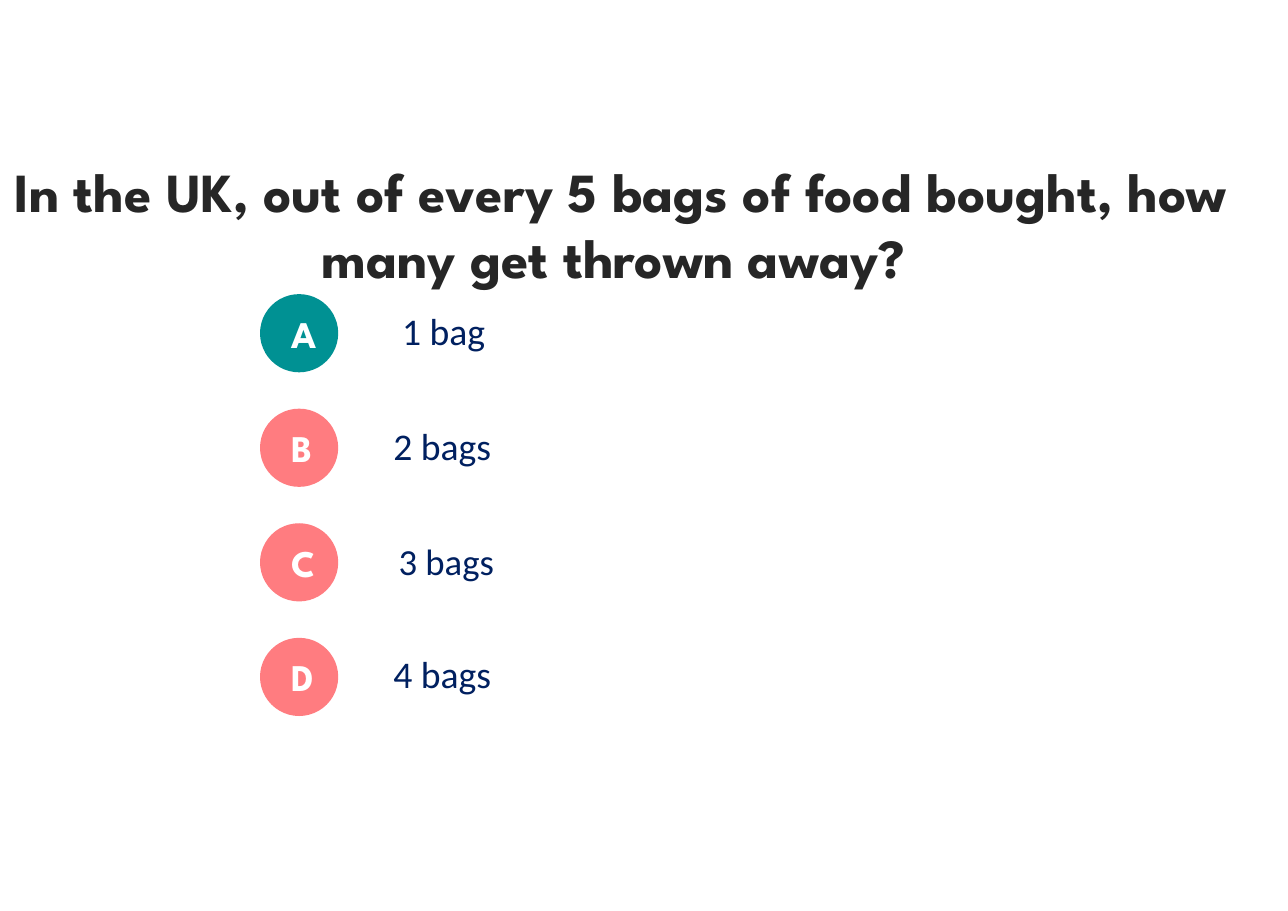
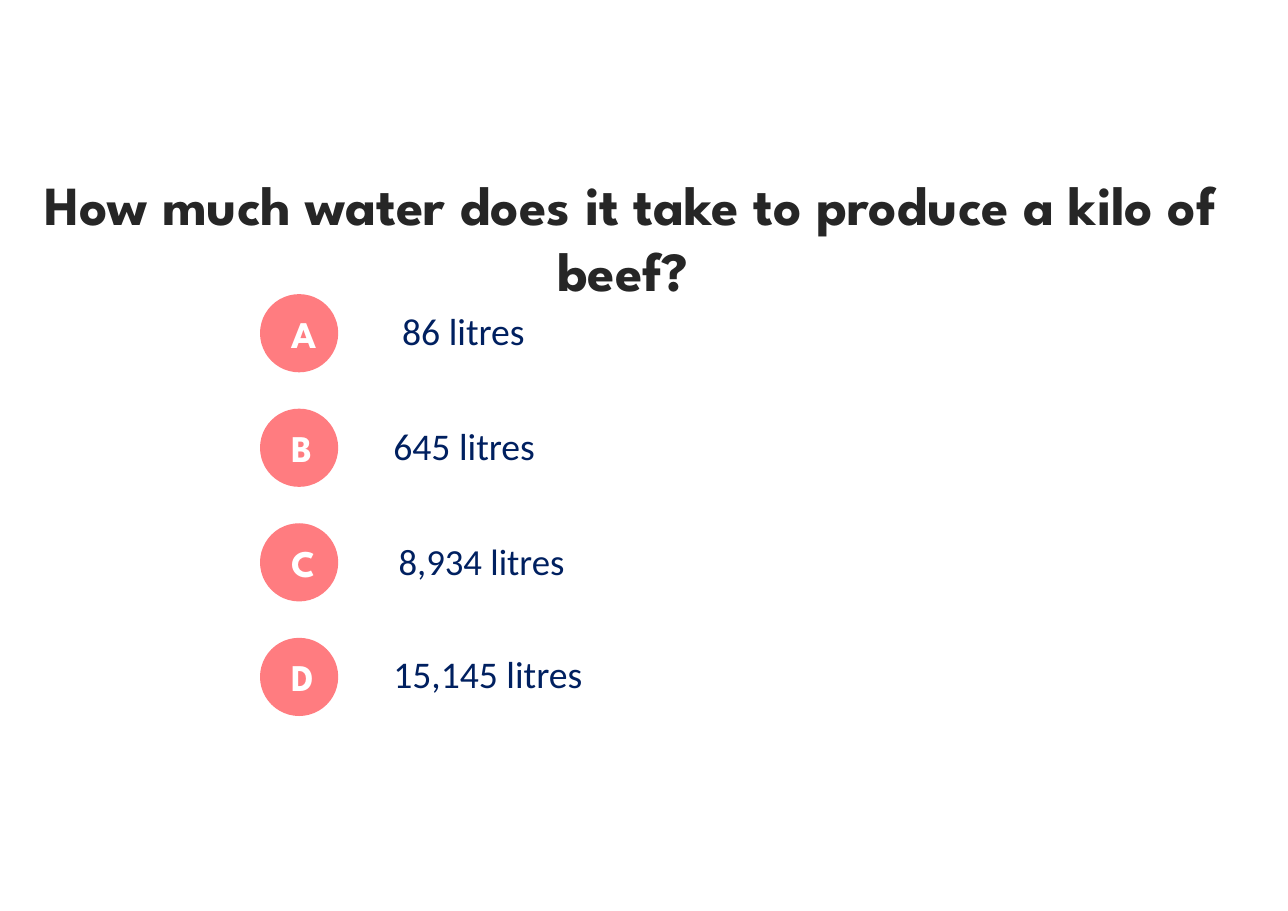
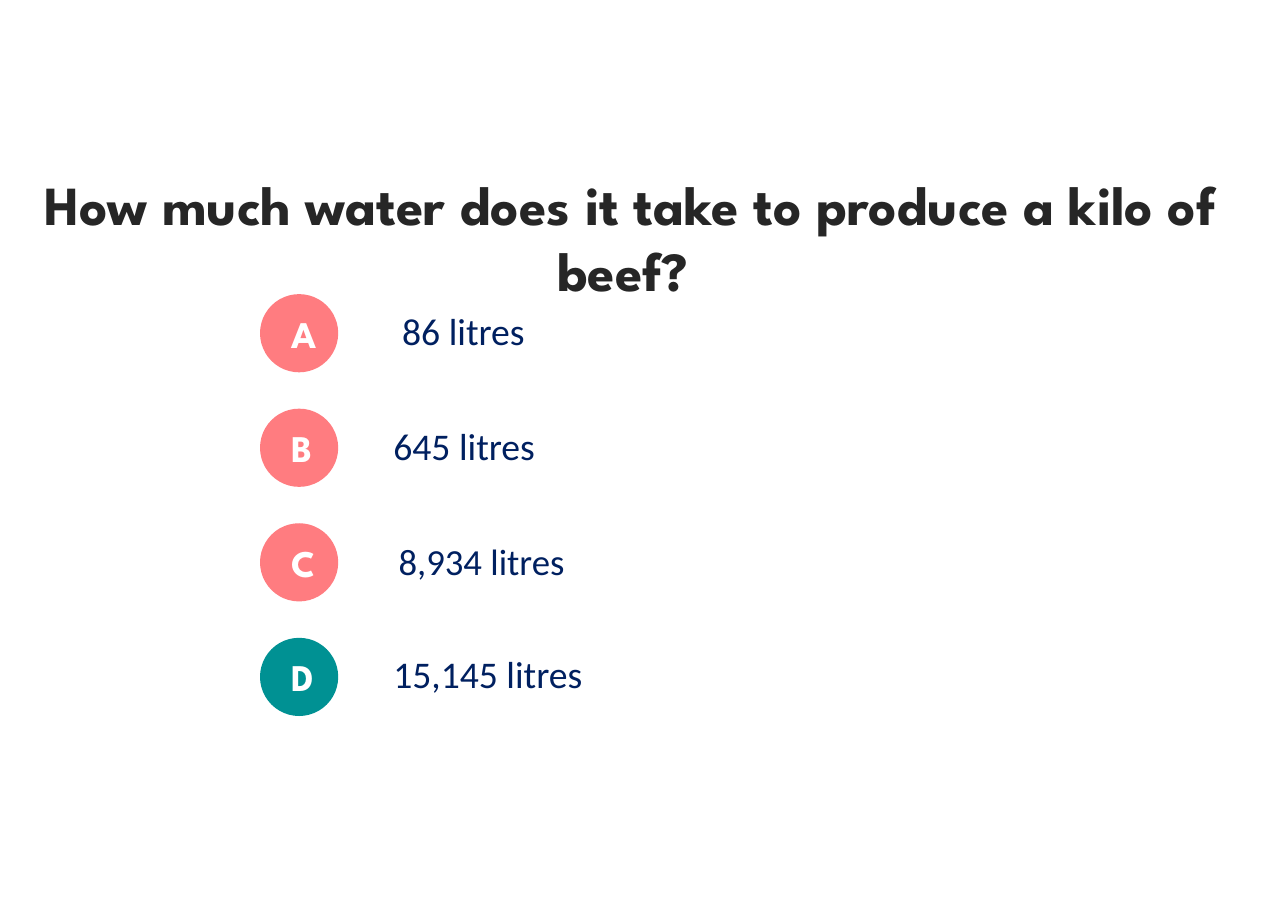
from pptx import Presentation
from pptx.dml.color import RGBColor
from pptx.enum import shapes, text
from pptx.util import Inches, Pt

# Colours
WHITE = RGBColor(0xFF, 0xFF, 0xFF)
CHARCOAL = RGBColor(0x26, 0x26, 0x26)
NAVY = RGBColor(0x00, 0x20, 0x60)
CORAL = RGBColor(0xFF, 0x7C, 0x80)
TEAL = RGBColor(0x00, 0x91, 0x93)

# Fonts
HEADING_FONT = "League Spartan"
BODY_FONT = "Calibri"

# Answer rows
LETTERS = "ABCD"
BADGE_TOP, ROW_STEP = 2.67, 1.04
ANSWER_LEFT = 3.48
ANSWER_TOPS = (2.63, 3.67, 4.69, 5.74)
ANSWER_HEIGHT = 0.8

# Questions: title, title place, answers, letter of the marked answer
BEEF_TITLE = "How much water does it take to produce a kilo of beef? "
BEEF_PLACE = (0.18, 1.5, 11.08, 1.31)
BEEF_ANSWERS = ("86 litres", "645 litres", "8,934 litres", "15,145 litres")
QUESTIONS = (
    ("In the UK, out of every 5 bags of food bought, how many get thrown away? ",
     (0, 1.38, 11.27, 1.3), ("1 bag", "2 bags", "3 bags", "4 bags"), "A"),
    (BEEF_TITLE, BEEF_PLACE, BEEF_ANSWERS, None),
    (BEEF_TITLE, BEEF_PLACE, BEEF_ANSWERS, "D"),
)


class Quiz:
    def __init__(self):
        self.deck = Presentation()
        self.deck.slide_width = Inches(11.69)
        self.deck.slide_height = Inches(8.27)
        self.page = None

    def add_page(self):
        self.page = self.deck.slides.add_slide(self.deck.slide_layouts[6])
        fill = self.page.background.fill
        fill.solid()
        fill.fore_color.rgb = WHITE

    def add_words(self, box, words, size, font, colour, bold=False,
                  centred=False, spacing=None, insets=(0.1, 0.05)):
        """Put one styled line of text in a box; return its frame."""
        frame = box.text_frame
        frame.word_wrap = True
        frame.margin_left = frame.margin_right = Inches(insets[0])
        frame.margin_top = frame.margin_bottom = Inches(insets[1])
        para = frame.paragraphs[0]
        para.alignment = text.PP_ALIGN.CENTER if centred else text.PP_ALIGN.LEFT
        if spacing:
            para.line_spacing = spacing
        span = para.add_run()
        span.text = words
        span.font.name = font
        span.font.size = Pt(size)
        span.font.bold = bold
        span.font.color.rgb = colour
        return frame

    def shape(self, kind, place, colour):
        shape = self.page.shapes.add_shape(kind, *map(Inches, place))
        shape.shadow.inherit = False
        shape.fill.solid()
        shape.fill.fore_color.rgb = colour
        shape.line.fill.background()
        return shape

    def heading(self, words, place, size, colour):
        box = self.page.shapes.add_textbox(*map(Inches, place))
        frame = self.add_words(box, words, size, HEADING_FONT, colour,
                               bold=True, centred=True)
        frame.auto_size = text.MSO_AUTO_SIZE.SHAPE_TO_FIT_TEXT

    def card(self, left, top):
        return self.shape(shapes.MSO_SHAPE.ROUNDED_RECTANGLE,
                          (left, top, 5.41, ANSWER_HEIGHT), WHITE)

    def badge(self, letter, top, colour):
        self.shape(shapes.MSO_SHAPE.OVAL, (2.36, top, 0.71, 0.71), colour)
        self.heading(letter, (2.55, top + 0.1, 0.34, 0.51), 24.6, WHITE)

    def answer(self, letter, words, top):
        # The third answer is set on its card, the others above theirs
        if letter == "C":
            box = self.card(ANSWER_LEFT, top)
            frame = self.add_words(box, words, 24, BODY_FONT, NAVY)
        else:
            if letter != "A":
                self.card(3.33, top)
            box = self.page.shapes.add_textbox(
                *map(Inches, (ANSWER_LEFT, top, 5.22, ANSWER_HEIGHT)))
            frame = self.add_words(box, words, 24.6, BODY_FONT, NAVY,
                                   spacing=0.9, insets=(0.09, 0.04))
            if letter == "A":
                frame.margin_left = Inches(0.17)
        frame.vertical_anchor = text.MSO_ANCHOR.MIDDLE

    def question(self, title, place, answers, marked):
        self.add_page()
        for row, (letter, words, top) in enumerate(
                zip(LETTERS, answers, ANSWER_TOPS)):
            self.answer(letter, words, top)
            self.badge(letter, BADGE_TOP + row * ROW_STEP,
                       TEAL if letter == marked else CORAL)
        self.heading(title, place, 36, CHARCOAL)


def main():
    quiz = Quiz()
    for question in QUESTIONS:
        quiz.question(*question)
    quiz.deck.save("out.pptx")


if __name__ == "__main__":
    main()
